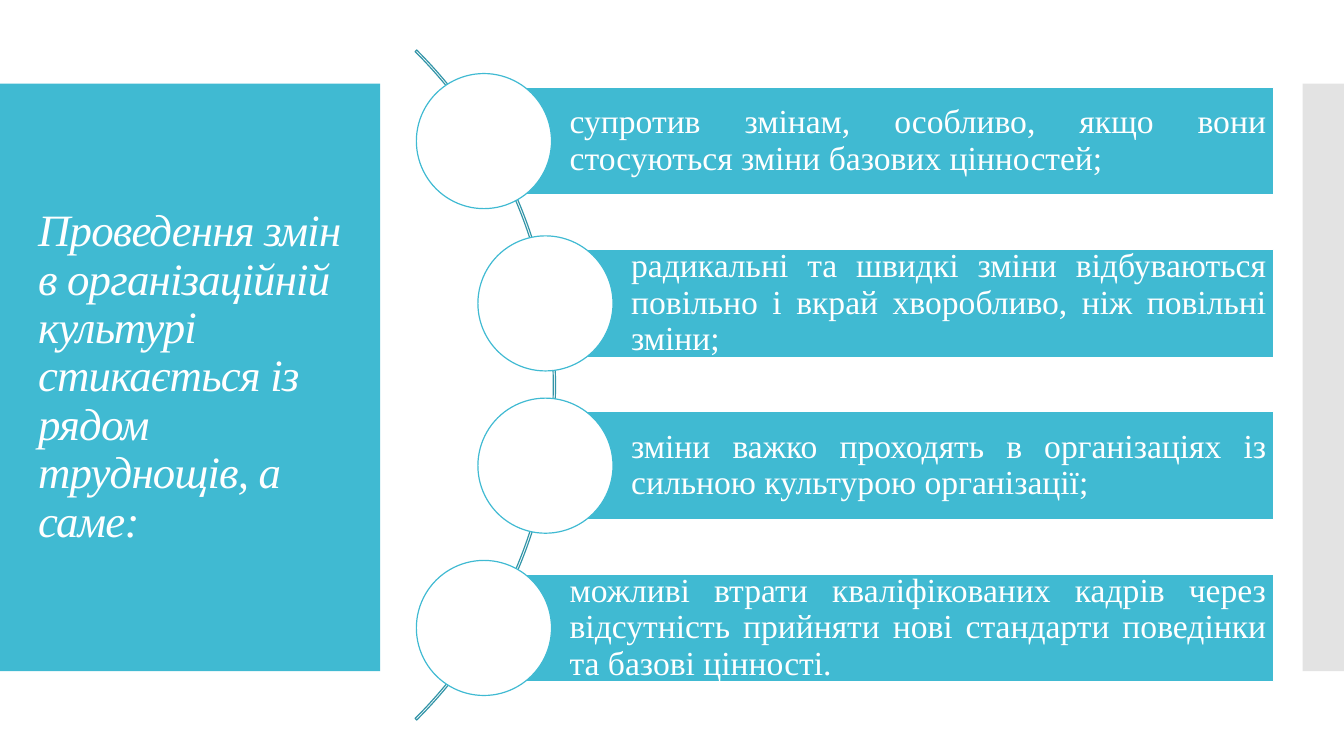
from dataclasses import dataclass

from pptx import Presentation
from pptx.dml.color import RGBColor
from pptx.enum.shapes import MSO_SHAPE
from pptx.enum.text import MSO_ANCHOR, PP_ALIGN
from pptx.oxml.ns import qn
from pptx.shapes.autoshape import Shape
from pptx.util import Inches, Pt
from lxml.etree import SubElement

TEAL, WHITE, GREY, DARK = "40BAD2", "FFFFFF", "C8C8C8", "3395A8"
RIGHT = 12.63  # shared right edge of the bars
BAR, BALL = 1.07, 1.34  # bar height, circle diameter
FIRST, STEP = 1.4, 1.61  # centre of the first row, row pitch


@dataclass
class Item:
    left: float
    text: str


ITEMS = [
    Item(4.8, "супротив змінам, особливо, якщо вони стосуються зміни базових цінностей;"),
    Item(5.41, "радикальні та швидкі зміни відбуваються повільно і вкрай "
               "хворобливо, ніж повільні зміни;"),
    Item(5.41, "зміни важко проходять в організаціях із сильною культурою організації;"),
    Item(4.8, "можливі втрати кваліфікованих кадрів через відсутність прийняти "
              "нові стандарти поведінки та базові цінності."),
]

prs = Presentation()
prs.slide_width, prs.slide_height = Inches(13.33), Inches(7.5)
slide = prs.slides.add_slide(prs.slide_layouts[6])


def tint(code: str) -> RGBColor:
    return RGBColor.from_string(code)


def apply(target: object, values: dict) -> None:
    for name, value in values.items():
        setattr(target, name, value)


def draw(kind: MSO_SHAPE, box: tuple, fill: str = "", line: str = "") -> Shape:
    shape = slide.shapes.add_shape(kind, *map(Inches, box))
    shape.shadow.inherit = False
    if fill:
        shape.fill.solid()
        shape.fill.fore_color.rgb = tint(fill)
    else:
        shape.fill.background()
    if line:
        shape.line.color.rgb = tint(line)
        shape.line.width = Pt(0.85)
    else:
        shape.line.fill.background()
    return shape


def write(shape: Shape, text: str, size: int, align: PP_ALIGN,
          frame: dict, style: dict) -> None:
    apply(shape.text_frame,
          {"word_wrap": True, "vertical_anchor": MSO_ANCHOR.MIDDLE, **frame})
    para = shape.text_frame.paragraphs[0]
    apply(para, {"text": text, "alignment": align, "line_spacing": 0.9})
    font = para.runs[0].font
    apply(font, {"name": "Times New Roman", "size": Pt(size), **style})
    font.color.rgb = tint(WHITE)


# Side panels, the right one half transparent
draw(MSO_SHAPE.RECTANGLE, (0, 0.83, 3.77, 5.83), TEAL)
strip = draw(MSO_SHAPE.RECTANGLE, (12.92, 0.83, 0.41, 5.83), GREY)
hue = strip.fill._xPr.find(".//" + qn("a:srgbClr"))
SubElement(hue, qn("a:alpha")).set("val", "50000")

# Title
title = slide.shapes.add_textbox(*map(Inches, (0.28, 1.23, 3.22, 5.03)))
write(title, "Проведення змін в організаційній культурі стикається із рядом "
      "труднощів, а саме:", 32, PP_ALIGN.LEFT, {}, {"italic": True})
title.text_frame.paragraphs[0].runs[0]._r.get_or_add_rPr().set("spc", "-60")

# Arc behind the rows
arc = draw(MSO_SHAPE.BLOCK_ARC, (-3.89, -0.88, 9.4, 9.4), line=DARK)
for index, value in enumerate((189, 27, 0.0023)):
    arc.adjustments[index] = value

# Rows: a bar with text, then a circle centred on its left edge
edge = Inches(0.07)
inset = {"margin_left": Inches(0.85), "margin_top": edge,
         "margin_right": edge, "margin_bottom": edge}
for row, item in enumerate(ITEMS):
    mid = FIRST + row * STEP
    bar = draw(MSO_SHAPE.RECTANGLE,
               (item.left, mid - BAR / 2, RIGHT - item.left, BAR), TEAL, WHITE)
    write(bar, item.text, 24, PP_ALIGN.JUSTIFY, inset, {})
    draw(MSO_SHAPE.OVAL,
         (item.left - BALL / 2, mid - BALL / 2, BALL, BALL), WHITE, TEAL)

prs.save("out.pptx")
